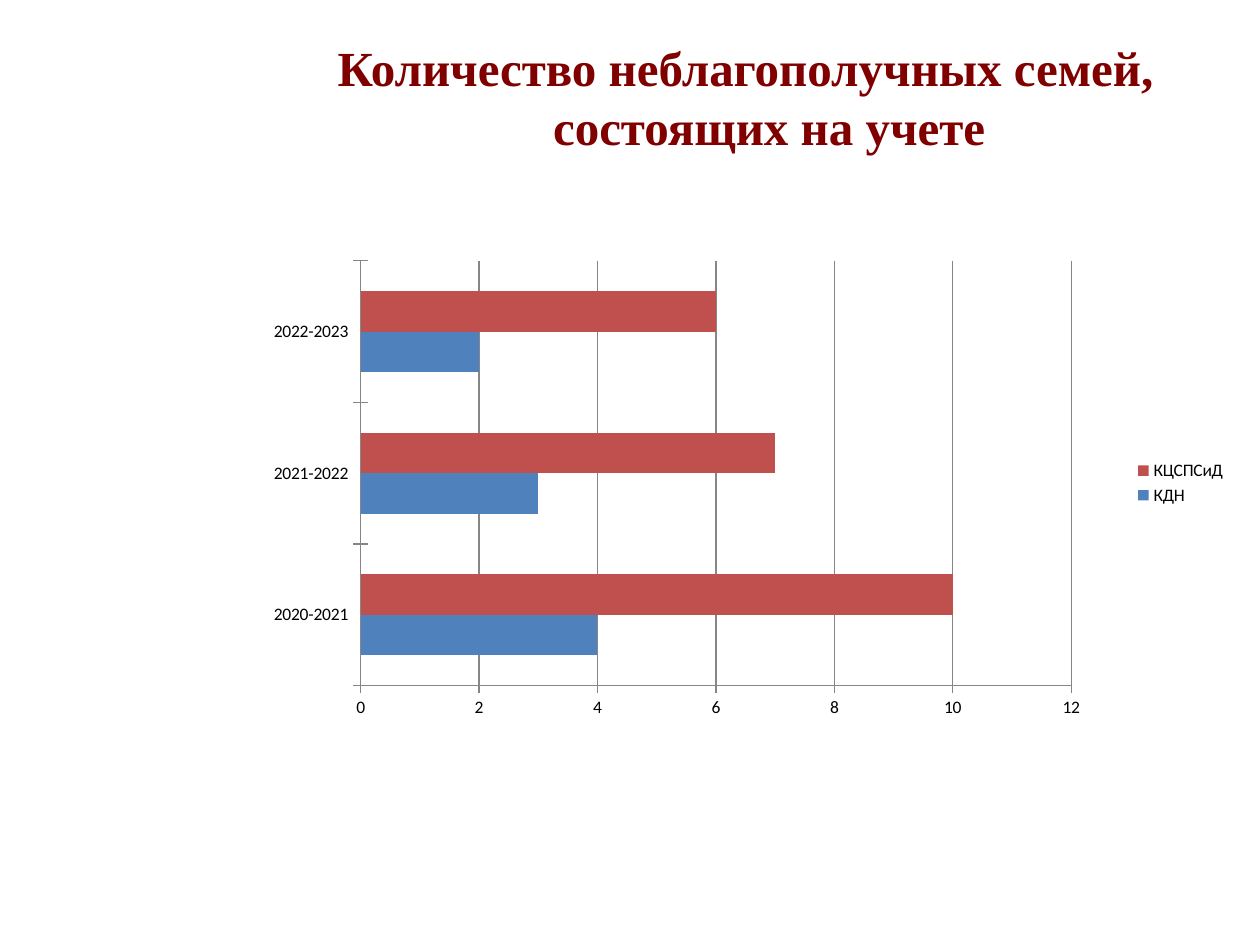
from dataclasses import dataclass

from lxml.etree import SubElement
from pptx import Presentation
from pptx.chart.chart import Chart
from pptx.chart.data import CategoryChartData
from pptx.dml.color import RGBColor
from pptx.enum.chart import XL_CHART_TYPE as ChartType
from pptx.enum.chart import XL_LEGEND_POSITION as LegendPosition
from pptx.enum.chart import XL_TICK_MARK as TickMark
from pptx.enum.text import MSO_ANCHOR as Anchor
from pptx.enum.text import MSO_AUTO_SIZE as AutoSize
from pptx.enum.text import PP_ALIGN as Align
from pptx.oxml.ns import qn
from pptx.slide import Slide
from pptx.util import Pt

PX = 9525
COLORS = {
    "title": "800000",
    "text": "000000",
    "line": "868686",
    "blue": "4F81BD",
    "red": "C0504D",
}


@dataclass(frozen=True)
class Box:
    left: int
    top: int
    width: int
    height: int

    def emu(self) -> tuple[int, int, int, int]:
        return self.left * PX, self.top * PX, self.width * PX, self.height * PX


@dataclass(frozen=True)
class Series:
    name: str
    values: tuple[int, ...]
    color: str


TITLE_BOX = Box(200, 24, 736, 128)
CHART_BOX = Box(192, 184, 752, 368)
YEARS = ("2020-2021", "2021-2022", "2022-2023")
SERIES = (
    Series("КДН", (4, 3, 2), "blue"),
    Series("КЦСПСиД", (10, 7, 6), "red"),
)
PLOT_LAYOUT = {
    "layoutTarget": "inner",
    "xMode": "edge",
    "yMode": "edge",
    "x": "0.11",
    "y": "0.04",
    "w": "0.72",
    "h": "0.88",
}


def rgb(name: str) -> RGBColor:
    return RGBColor.from_string(COLORS[name])


def write_title(page: Slide, text: str, box: Box) -> None:
    title = page.shapes.title
    title.left, title.top, title.width, title.height = box.emu()
    frame = title.text_frame
    frame.word_wrap = True
    frame.auto_size = AutoSize.NONE
    frame.vertical_anchor = Anchor.TOP
    frame.text = text
    para = frame.paragraphs[0]
    para.alignment = Align.CENTER
    para.space_before = Pt(0)
    hanging = 36 * PX
    properties = para._p.get_or_add_pPr()
    properties.set("marL", str(hanging))
    properties.set("indent", str(-hanging))
    para.font.name = "Times New Roman"
    para.font.size = Pt(28)
    para.font.bold = True
    para.font.color.rgb = rgb("title")


def place_plot(chart: Chart) -> None:
    area = chart._chartSpace.chart.plotArea
    layout = area.find(qn("c:layout"))
    if layout is None:
        layout = SubElement(area, qn("c:layout"))
        area.insert(0, layout)
    manual = SubElement(layout, qn("c:manualLayout"))
    for tag, value in PLOT_LAYOUT.items():
        SubElement(manual, qn(f"c:{tag}")).set("val", value)


def draw_chart(page: Slide, box: Box) -> None:
    data = CategoryChartData()
    data.categories = YEARS
    for item in SERIES:
        data.add_series(item.name, item.values)
    chart = page.shapes.add_chart(ChartType.BAR_CLUSTERED, *box.emu(), data).chart
    chart.has_title = False
    chart.font.name = "Calibri"
    chart.font.size = Pt(10)
    chart.font.color.rgb = rgb("text")
    chart.has_legend = True
    chart.legend.position = LegendPosition.RIGHT
    chart.legend.include_in_layout = False

    plot = chart.plots[0]
    plot.vary_by_categories = False
    plot.gap_width = 150
    plot.overlap = 0
    for series, item in zip(plot.series, SERIES):
        series.format.fill.solid()
        series.format.fill.fore_color.rgb = rgb(item.color)

    chart.value_axis.minimum_scale = 0
    chart.value_axis.maximum_scale = 12
    chart.value_axis.major_unit = 2
    chart.value_axis.has_major_gridlines = True
    chart.category_axis.has_major_gridlines = False
    for axis in (chart.category_axis, chart.value_axis):
        axis.major_tick_mark = TickMark.CROSS
        axis.minor_tick_mark = TickMark.NONE
    for target in (
        chart.category_axis,
        chart.value_axis,
        chart.value_axis.major_gridlines,
    ):
        target.format.line.color.rgb = rgb("line")
        target.format.line.width = Pt(0.75)
    place_plot(chart)


def main() -> None:
    deck = Presentation()
    deck.slide_width = 960 * PX
    deck.slide_height = 720 * PX
    page = deck.slides.add_slide(deck.slide_layouts[5])
    write_title(page, "Количество неблагополучных семей, состоящих на учете", TITLE_BOX)
    draw_chart(page, CHART_BOX)
    deck.save("out.pptx")


if __name__ == "__main__":
    main()
